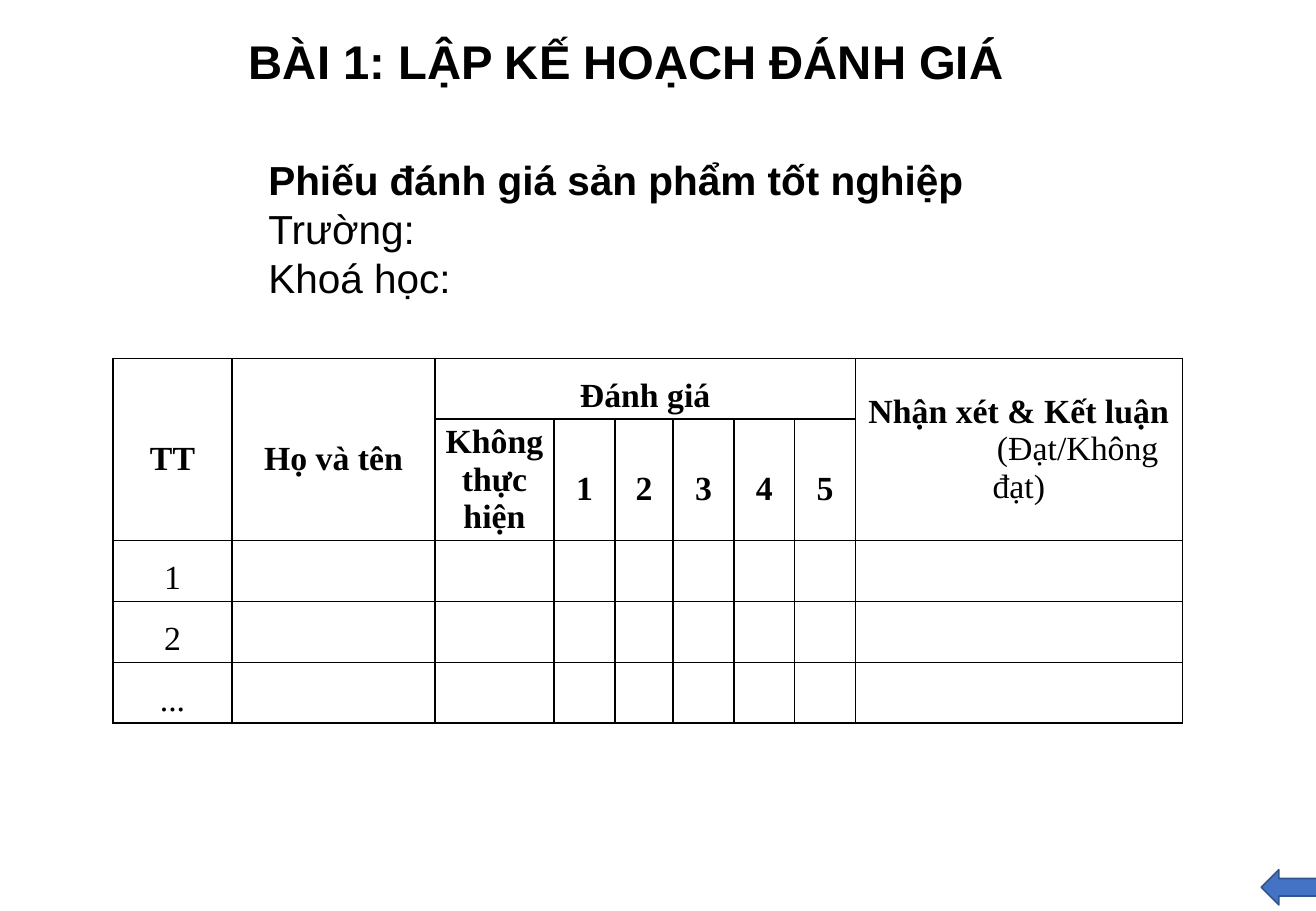
from lxml.etree import SubElement
from pptx import Presentation
from pptx.dml.color import RGBColor
from pptx.enum.shapes import MSO_SHAPE
from pptx.enum.text import MSO_ANCHOR, MSO_AUTO_SIZE, PP_ALIGN
from pptx.oxml.ns import qn
from pptx.util import Inches, Pt

COLORS = {"ink": "000000", "arrow": "4472C4", "arrow_edge": "325491"}
TITLE = "BÀI 1: LẬP KẾ HOẠCH ĐÁNH GIÁ"
FORM_LINES = [
    ("Phiếu đánh giá sản phẩm tốt nghiệp", True),
    ("Trường:", False),
    ("Khoá học:", False),
]
COLUMN_WIDTHS = [0.98, 1.67, 0.98, 0.5, 0.48, 0.5, 0.5, 0.5, 2.69]
ROW_HEIGHTS = [0.5, 1, 0.5, 0.5, 0.5]
MERGES = [((0, 0), (1, 0)), ((0, 1), (1, 1)), ((0, 2), (0, 7)), ((0, 8), (1, 8))]
HEADINGS = {(0, 0): "TT", (0, 1): "Họ và tên", (0, 2): "Đánh giá"}
SCORES = ["1", "2", "3", "4", "5"]
NOT_DONE = "Không thực hiện"
REMARK, VERDICT = "Nhận xét & Kết luận", "(Đạt/Không đạt)"
VERDICT_INDENT = 0.97
STUDENTS = ["1", "2", "..."]


def color(name):
    return RGBColor.from_string(COLORS[name])


def write(paragraph, text, face, size, bold):
    paragraph.text = text
    font = paragraph.font
    font.name, font.size, font.bold = face, Pt(size), bold
    font.color.rgb = color("ink")


def add_text(slide, box, lines, size, wrap):
    frame = slide.shapes.add_textbox(*map(Inches, box)).text_frame
    frame.word_wrap = wrap
    frame.auto_size = MSO_AUTO_SIZE.SHAPE_TO_FIT_TEXT
    for index, (text, bold) in enumerate(lines):
        paragraph = frame.add_paragraph() if index else frame.paragraphs[0]
        write(paragraph, text, "Arial", size, bold)


def outline(cell):
    properties = cell._tc.get_or_add_tcPr()
    for side in ("lnL", "lnR", "lnT", "lnB"):
        edge = SubElement(properties, qn(f"a:{side}"), w=str(Pt(1)))
        SubElement(SubElement(edge, qn("a:solidFill")), qn("a:srgbClr"), val=COLORS["ink"])
    cell.fill.background()


def write_cell(cell, text, bold=True, spacing=1.5, anchor=MSO_ANCHOR.MIDDLE):
    cell.margin_left = cell.margin_right = Inches(0.07)
    cell.margin_top = cell.margin_bottom = 0
    cell.vertical_anchor = anchor
    paragraph = cell.text_frame.paragraphs[0]
    write(paragraph, text, "Times New Roman", 20, bold)
    paragraph.alignment, paragraph.line_spacing = PP_ALIGN.CENTER, spacing


def add_assessment(slide):
    table = slide.shapes.add_table(
        len(ROW_HEIGHTS), len(COLUMN_WIDTHS), Inches(0.93), Inches(2.95),
        Inches(sum(COLUMN_WIDTHS)), Inches(sum(ROW_HEIGHTS))).table
    table.first_row = table.horz_banding = False
    for column, width in zip(table.columns, COLUMN_WIDTHS):
        column.width = Inches(width)
    for row, height in zip(table.rows, ROW_HEIGHTS):
        row.height = Inches(height)
    for cell in table.iter_cells():
        outline(cell)
    for first, last in MERGES:
        table.cell(*first).merge(table.cell(*last))

    for place, heading in HEADINGS.items():
        anchor = MSO_ANCHOR.TOP if heading == "Đánh giá" else MSO_ANCHOR.MIDDLE
        write_cell(table.cell(*place), heading, anchor=anchor)
    write_cell(table.cell(1, 2), NOT_DONE, spacing=1.0)
    for column, score in enumerate(SCORES, 3):
        write_cell(table.cell(1, column), score)
    for row, student in enumerate(STUDENTS, 2):
        write_cell(table.cell(row, 0), student, bold=False, anchor=MSO_ANCHOR.TOP)

    remarks = table.cell(0, 8)
    write_cell(remarks, REMARK, spacing=1.0)
    verdict = remarks.text_frame.add_paragraph()
    write(verdict, VERDICT, "Times New Roman", 20, False)
    verdict.alignment = PP_ALIGN.CENTER
    verdict._p.get_or_add_pPr().set("indent", str(Inches(VERDICT_INDENT)))


def add_back_arrow(slide):
    arrow = slide.shapes.add_shape(
        MSO_SHAPE.LEFT_ARROW, *map(Inches, (10.38, 7.16, 0.46, 0.29)))
    arrow.shadow.inherit = False
    arrow.fill.solid()
    arrow.fill.fore_color.rgb = color("arrow")
    arrow.line.color.rgb = color("arrow_edge")
    arrow.line.width = Pt(1)


def main():
    """Build the graduation product assessment form slide."""
    deck = Presentation()
    deck.slide_width, deck.slide_height = Inches(10.83), Inches(7.5)
    slide = deck.slides.add_slide(deck.slide_layouts[6])
    add_text(slide, (2.11, 1.23, 6.77, 1.31), FORM_LINES, 24, True)
    add_assessment(slide)
    add_back_arrow(slide)
    add_text(slide, (1.95, 0.22, 6.48, 0.57), [(TITLE, True)], 28, False)
    deck.save("out.pptx")


if __name__ == "__main__":
    main()
